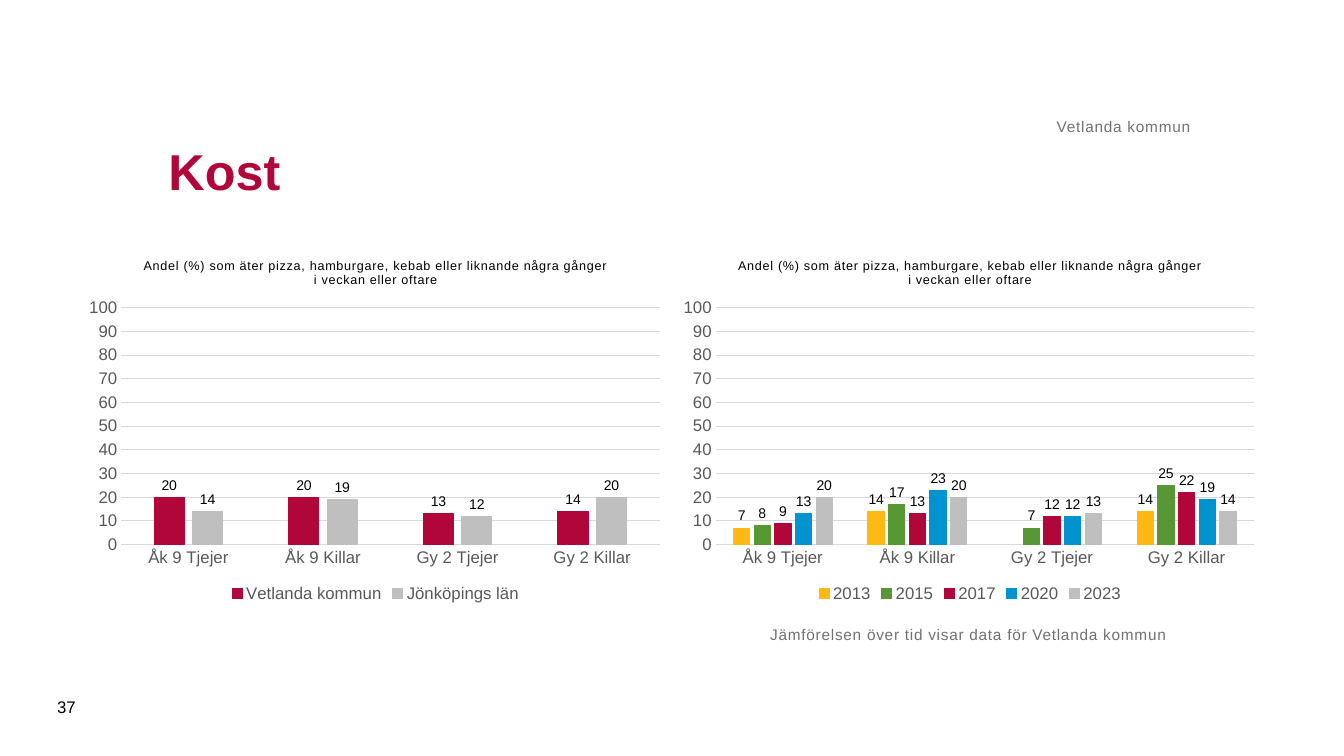
from dataclasses import dataclass

import pptx
import pptx.chart.data
import pptx.dml.color
import pptx.enum.chart
import pptx.enum.text
import pptx.oxml
import pptx.oxml.ns
import pptx.util
from pptx.util import Cm, Pt

RGBColor = pptx.dml.color.RGBColor
Align = pptx.enum.text.PP_ALIGN
Anchor = pptx.enum.text.MSO_ANCHOR
TickMark = pptx.enum.chart.XL_TICK_MARK

BLACK = RGBColor(0x00, 0x00, 0x00)
AXIS_GREY = RGBColor(0x59, 0x59, 0x59)
TEXT_GREY = RGBColor(0x71, 0x71, 0x71)
BAR_GREY = RGBColor(0xBF, 0xBF, 0xBF)
LINE_GREY = RGBColor(0xD9, 0xD9, 0xD9)
CRIMSON = RGBColor(0xB1, 0x06, 0x3A)
YELLOW = RGBColor(0xFD, 0xB9, 0x13)
GREEN = RGBColor(0x57, 0x98, 0x35)
BLUE = RGBColor(0x00, 0x93, 0xD0)

FONT = "Arial"
NUMBER_FORMAT = "#,##0;#,##0"
LETTER_SPACING = "50"
GROUPS = ["Åk 9 Tjejer", "Åk 9 Killar", "Gy 2 Tjejer", "Gy 2 Killar"]
QUESTION = (
    "Andel (%) som äter pizza, hamburgare, kebab eller liknande "
    "några gånger i veckan eller oftare"
)
PLOT_AREA = {"x": 0.07, "y": 0.18, "w": 0.91, "h": 0.65}


@dataclass
class Series:
    name: str
    values: list[int | None]
    color: RGBColor


@dataclass
class ColumnChart:
    left: float
    series: list[Series]


@dataclass
class Label:
    text: str
    box: tuple[float, float, float, float]
    size: float = 11
    color: RGBColor = TEXT_GREY
    align: Align = Align.LEFT
    anchor: Anchor = Anchor.TOP
    spaced: bool = True
    inset: float = 0


CHARTS = [
    ColumnChart(2.01, [
        Series("Vetlanda kommun", [20, 20, 13, 14], CRIMSON),
        Series("Jönköpings län", [14, 19, 12, 20], BAR_GREY),
    ]),
    ColumnChart(16.99, [
        Series("2013", [7, 14, None, 14], YELLOW),
        Series("2015", [8, 17, 7, 25], GREEN),
        Series("2017", [9, 13, 12, 22], CRIMSON),
        Series("2020", [13, 23, 12, 19], BLUE),
        Series("2023", [20, 20, 13, 14], BAR_GREY),
    ]),
]

LABELS = [
    Label("Jämförelsen över tid visar data för Vetlanda kommun",
          (19.41, 15.75, 13.49, 2.39)),
    Label("Vetlanda kommun", (3.99, 1.57, 26.01, 1.85),
          align=Align.RIGHT, anchor=Anchor.BOTTOM),
    Label("37", (1.19, 17.3, 1.45, 1.02), size=12, color=BLACK,
          anchor=Anchor.MIDDLE, spaced=False, inset=0.25),
]


def style_font(font, size: float, color: RGBColor, bold: bool = False) -> None:
    font.name = FONT
    font.size = Pt(size)
    font.bold = bold
    font.color.rgb = color


def space_letters(paragraph) -> None:
    for run in paragraph.runs:
        run._r.get_or_add_rPr().set("spc", LETTER_SPACING)


def style_line(line, color: RGBColor) -> None:
    line.color.rgb = color
    line.width = Pt(0.75)


def fix_plot_area(chart) -> None:
    """Give the inner plot area a fixed share of the chart."""
    plot_area = chart._chartSpace.chart.plotArea
    for layout in plot_area.findall(pptx.oxml.ns.qn("c:layout")):
        plot_area.remove(layout)
    modes = "".join(f'<c:{axis}Mode val="edge"/>' for axis in "xy")
    sizes = "".join(f'<c:{key} val="{share}"/>' for key, share in PLOT_AREA.items())
    plot_area.insert(0, pptx.oxml.parse_xml(
        f'<c:layout {pptx.oxml.ns.nsdecls("c")}><c:manualLayout>'
        f'<c:layoutTarget val="inner"/>{modes}{sizes}'
        f'</c:manualLayout></c:layout>'))


def add_column_chart(slide, column_chart: ColumnChart) -> None:
    data = pptx.chart.data.CategoryChartData(number_format=NUMBER_FORMAT)
    data.categories = GROUPS
    for series in column_chart.series:
        data.add_series(series.name, series.values)
    chart = slide.shapes.add_chart(
        pptx.enum.chart.XL_CHART_TYPE.COLUMN_CLUSTERED,
        Cm(column_chart.left), Cm(6.1), Cm(14.91), Cm(9.19), data).chart
    style_font(chart.font, 10, BLACK)

    # Chart title and legend
    chart.has_title = True
    chart.chart_title.include_in_layout = False
    paragraph = chart.chart_title.text_frame.paragraphs[0]
    paragraph.text = QUESTION
    style_font(paragraph.font, 9, BLACK)
    style_font(paragraph.runs[0].font, 9, BLACK)
    space_letters(paragraph)
    chart.has_legend = True
    chart.legend.position = pptx.enum.chart.XL_LEGEND_POSITION.BOTTOM
    chart.legend.include_in_layout = False
    style_font(chart.legend.font, 12, AXIS_GREY)

    # Axes
    for axis in (chart.category_axis, chart.value_axis):
        axis.major_tick_mark = axis.minor_tick_mark = TickMark.NONE
        style_font(axis.tick_labels.font, 12, AXIS_GREY)
    style_line(chart.category_axis.format.line, LINE_GREY)
    value_axis = chart.value_axis
    value_axis.minimum_scale, value_axis.maximum_scale = 0, 100
    value_axis.major_unit = 10
    value_axis.format.line.fill.background()
    style_line(value_axis.major_gridlines.format.line, LINE_GREY)
    value_axis.tick_labels.number_format = NUMBER_FORMAT
    value_axis.tick_labels.number_format_is_linked = False

    # Columns and their values
    plot = chart.plots[0]
    plot.gap_width, plot.overlap = 219, -27
    plot.vary_by_categories = False
    for column, series in zip(plot.series, column_chart.series):
        column.format.fill.solid()
        column.format.fill.fore_color.rgb = series.color
        style_line(column.format.line, series.color)
        labels = column.data_labels
        labels.show_value = True
        labels.position = pptx.enum.chart.XL_LABEL_POSITION.OUTSIDE_END
        labels.number_format = NUMBER_FORMAT
        labels.number_format_is_linked = False
        style_font(labels.font, 10, BLACK)
    fix_plot_area(chart)


def add_label(slide, label: Label) -> None:
    frame = slide.shapes.add_textbox(*map(Cm, label.box)).text_frame
    frame.word_wrap = True
    frame.vertical_anchor = label.anchor
    frame.margin_left = frame.margin_right = Cm(label.inset)
    frame.margin_top = frame.margin_bottom = Cm(label.inset / 2)
    paragraph = frame.paragraphs[0]
    paragraph.text = label.text
    paragraph.alignment = label.align
    style_font(paragraph.font, label.size, label.color)
    if label.spaced:
        space_letters(paragraph)


def add_title(slide, text: str) -> None:
    title = slide.shapes.title
    title.left, title.top, title.width, title.height = map(
        Cm, (3.99, 2.49, 26.01, 3.61))
    title.text_frame.vertical_anchor = Anchor.MIDDLE
    paragraph = title.text_frame.paragraphs[0]
    paragraph.text = text
    paragraph.alignment = Align.LEFT
    style_font(paragraph.font, 36, CRIMSON, bold=True)


def main() -> None:
    presentation = pptx.Presentation()
    presentation.slide_width, presentation.slide_height = Cm(33.87), Cm(19.05)
    slide = presentation.slides.add_slide(presentation.slide_layouts[5])
    add_title(slide, "Kost")
    for column_chart in CHARTS:
        add_column_chart(slide, column_chart)
    for label in LABELS:
        add_label(slide, label)
    presentation.save("out.pptx")


if __name__ == "__main__":
    main()
